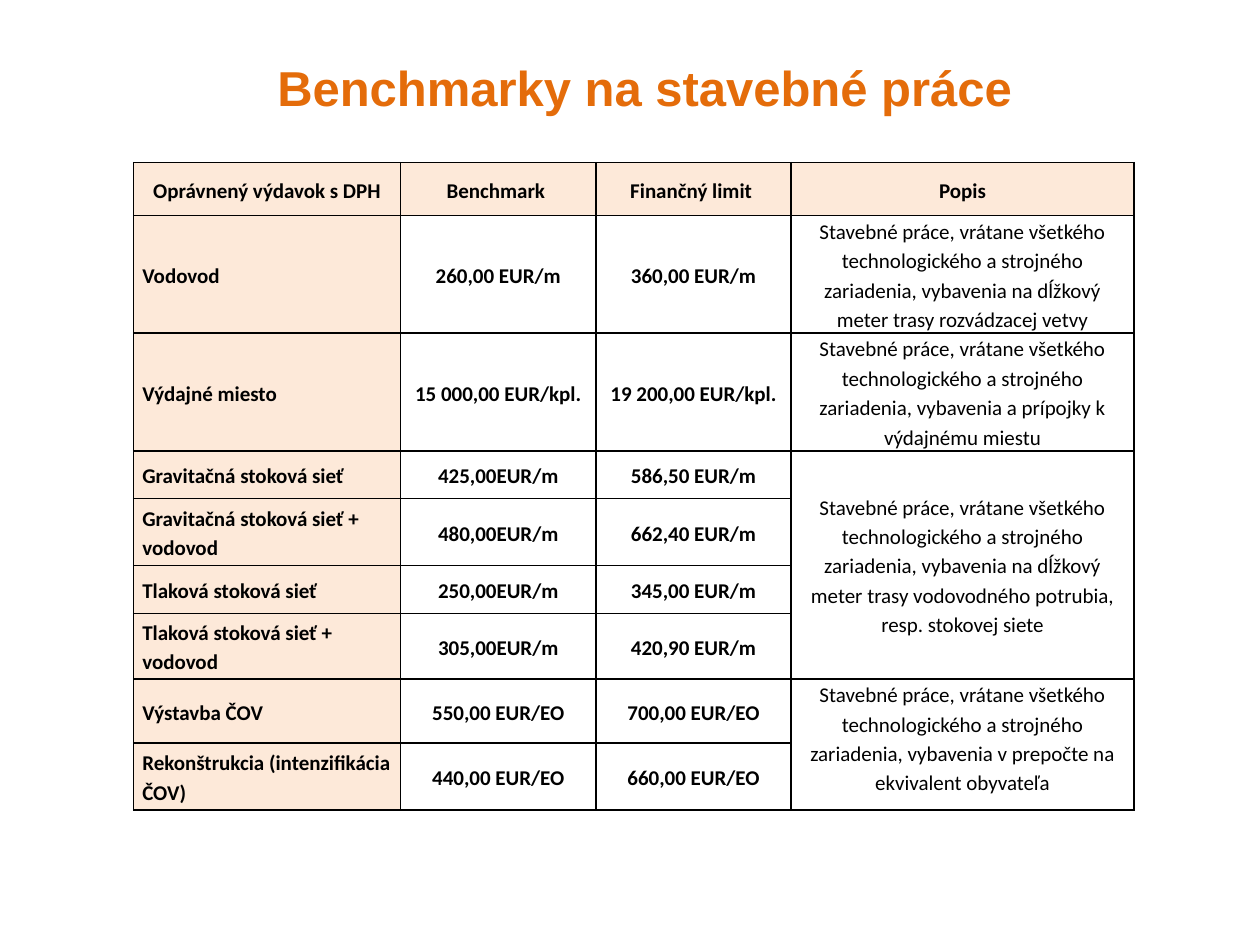
from lxml import etree
from pptx import Presentation
from pptx import util as u
from pptx.dml.color import RGBColor
from pptx.enum import text
from pptx.oxml.ns import qn

THEME = {
    "title_font": "Arial", "title_size": 28, "title_color": "E46C0A",
    "font": "Calibri", "size": 12, "color": "000000",
    "label_fill": "FDE9D9", "border": "000000", "border_width": 1,
}
TITLE = "Benchmarky na stavebné práce"
HEADER = ("Oprávnený výdavok s DPH", "Benchmark ", "Finančný limit ", "Popis")
ROWS = [
    ("Vodovod", "260,00 EUR/m", "360,00 EUR/m"),
    ("Výdajné miesto", "15 000,00 EUR/kpl.", "19 200,00 EUR/kpl."),
    ("Gravitačná stoková sieť", "425,00EUR/m", "586,50 EUR/m"),
    ("Gravitačná stoková sieť + vodovod", "480,00EUR/m", "662,40 EUR/m"),
    ("Tlaková stoková sieť", "250,00EUR/m", "345,00 EUR/m"),
    ("Tlaková stoková sieť + vodovod", "305,00EUR/m", "420,90 EUR/m"),
    ("Výstavba ČOV", "550,00 EUR/EO", "700,00 EUR/EO"),
    ("Rekonštrukcia (intenzifikácia ČOV)", "440,00 EUR/EO", "660,00 EUR/EO"),
]
COMMON = "Stavebné práce, vrátane všetkého technologického a strojného zariadenia, vybavenia "
DESCRIPTIONS = [
    (1, "na dĺžkový meter trasy rozvádzacej vetvy"),
    (1, "a prípojky k výdajnému miestu"),
    (4, "na dĺžkový meter trasy vodovodného potrubia, resp. stokovej siete"),
    (2, "v prepočte na ekvivalent obyvateľa"),
]
COL_WIDTHS = (2.12, 1.55, 1.55, 2.72)
ROW_HEIGHTS = (0.42, 0.93, 0.93, 0.38, 0.53, 0.38, 0.52, 0.51, 0.53)


def add_run(p, words, font, size, color, bold):
    r = p.add_run()
    r.text = words
    r.font.name, r.font.size, r.font.bold = font, u.Pt(size), bold
    r.font.color.rgb = RGBColor.from_string(color)


def style_cell(cell, filled):
    cell.margin_left = cell.margin_right = u.Inches(0.07)
    cell.margin_top = cell.margin_bottom = 0
    pr = cell._tc.get_or_add_tcPr()
    for side in ("a:lnL", "a:lnR", "a:lnT", "a:lnB"):
        ln = etree.SubElement(pr, qn(side), w=str(u.Pt(THEME["border_width"])))
        fill = etree.SubElement(ln, qn("a:solidFill"))
        etree.SubElement(fill, qn("a:srgbClr"), val=THEME["border"])
    if filled:
        cell.fill.solid()
        cell.fill.fore_color.rgb = RGBColor.from_string(THEME["label_fill"])
    else:
        cell.fill.background()


def write_cell(cell, words, bold=True, centered=True, anchor=text.MSO_ANCHOR.MIDDLE):
    cell.vertical_anchor = anchor
    p = cell.text_frame.paragraphs[0]
    p.alignment = text.PP_ALIGN.CENTER if centered else text.PP_ALIGN.LEFT
    p.line_spacing = 1.15
    add_run(p, words, THEME["font"], THEME["size"], THEME["color"], bold)


def add_title(s):
    sp = s.shapes.title
    sp.left, sp.top, sp.width, sp.height = map(u.Inches, (0.55, 0.36, 9.13, 0.75))
    tf = sp.text_frame
    tf.word_wrap = True
    tf.vertical_anchor = text.MSO_ANCHOR.TOP
    tf.margin_top = u.Inches(0.1)
    p = tf.paragraphs[0]
    p.alignment = text.PP_ALIGN.CENTER
    add_run(p, TITLE, THEME["title_font"], THEME["title_size"], THEME["title_color"], True)


def add_benchmarks(s):
    size = map(u.Inches, (1.06, 1.29, sum(COL_WIDTHS), sum(ROW_HEIGHTS)))
    table = s.shapes.add_table(len(ROW_HEIGHTS), len(COL_WIDTHS), *size).table
    table.horz_banding = False
    for col, width in zip(table.columns, COL_WIDTHS):
        col.width = u.Inches(width)
    for i, (row, height) in enumerate(zip(table.rows, ROW_HEIGHTS)):
        row.height = u.Inches(height)
        for j, cell in enumerate(row.cells):
            style_cell(cell, filled=i == 0 or j == 0)
    for i, values in enumerate([HEADER] + ROWS):
        for j, words in enumerate(values):
            write_cell(table.cell(i, j), words, centered=i == 0 or j > 0)
    top = 1
    last = len(COL_WIDTHS) - 1
    for span, ending in DESCRIPTIONS:
        cell = table.cell(top, last)
        if span > 1:
            cell.merge(table.cell(top + span - 1, last))
        anchor = text.MSO_ANCHOR.TOP if span == 2 else text.MSO_ANCHOR.MIDDLE
        write_cell(cell, COMMON + ending, bold=False, anchor=anchor)
        top += span


def main():
    prs = Presentation()
    prs.slide_width, prs.slide_height = u.Inches(10), u.Inches(7.5)
    s = prs.slides.add_slide(prs.slide_layouts[5])
    add_title(s)
    add_benchmarks(s)
    prs.save("out.pptx")


if __name__ == "__main__":
    main()
